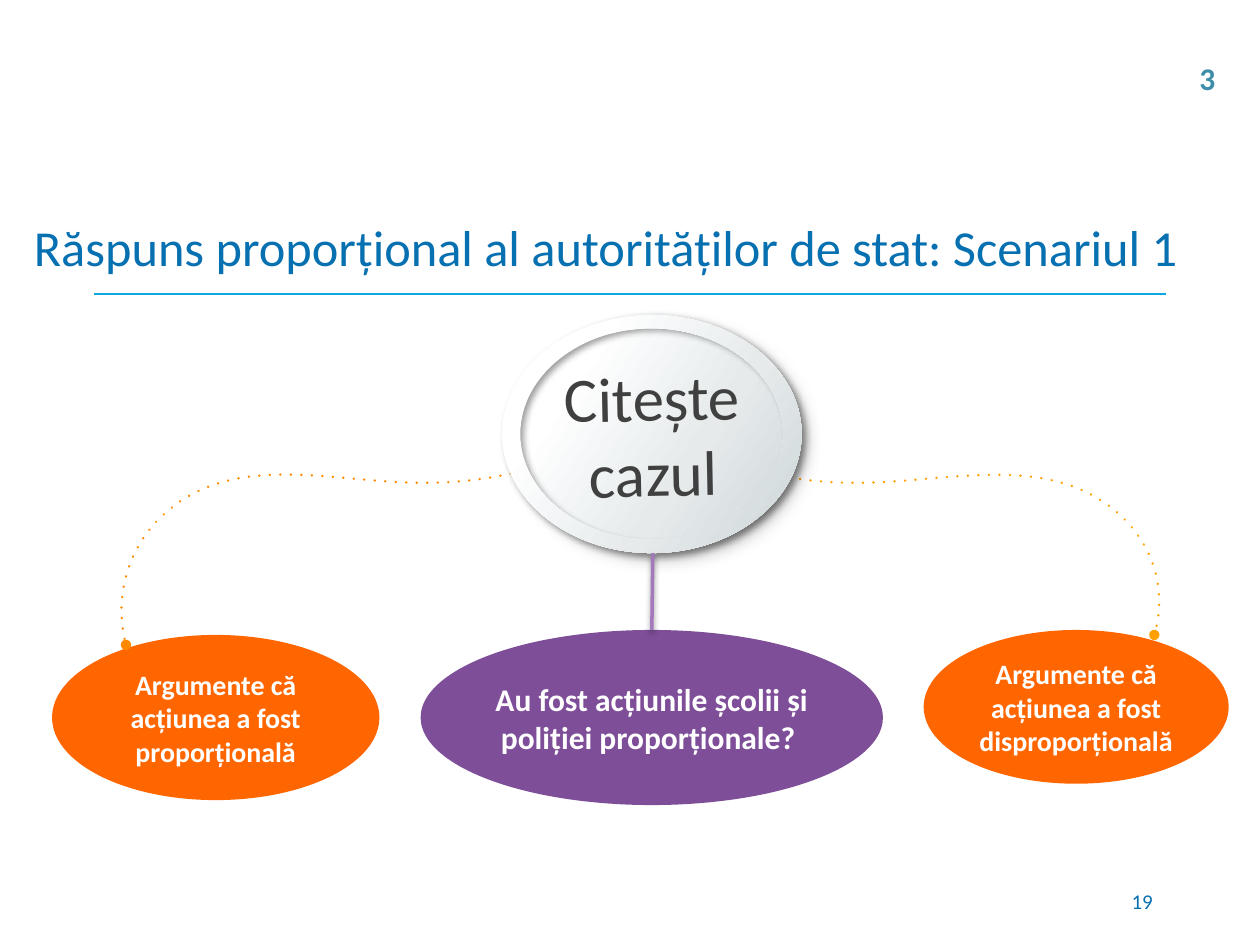
from dataclasses import dataclass

from lxml import etree
from pptx import Presentation
from pptx.dml.color import RGBColor
from pptx.enum import shapes, text
from pptx.oxml import ns
from pptx.util import Cm, Pt


@dataclass(frozen=True)
class Theme:
    font: str = "Calibri"
    blue: str = "0770B1"
    rule: str = "0BA7DF"
    orange: str = "FF6600"
    left_branch: str = "FF8A00"
    right_branch: str = "FF9F00"
    purple: str = "7E4E99"
    stem: str = "A379BB"
    badge: str = "3E8EA9"
    dark: str = "404040"
    white: str = "FFFFFF"
    metal: tuple = ((23, "FFFFFF"), (63, "E6EAEB"), (100, "CDD5D8"))
    title_size: float = 28.8
    hub_size: int = 36
    question_size: int = 18
    argument_size: int = 16
    number_size: int = 12


THEME = Theme()
CENTER, RIGHT = text.PP_ALIGN.CENTER, text.PP_ALIGN.RIGHT


def rgb(value):
    return RGBColor.from_string(value)


def child(parent, tag, **attributes):
    element = etree.SubElement(parent, ns.qn(tag))
    for key, value in attributes.items():
        element.set(key, str(value))
    return element


def place(shape, left, top, width, height):
    shape.left, shape.top = Cm(left), Cm(top)
    shape.width, shape.height = Cm(width), Cm(height)


def write(frame, words, size, color, bold=False, align=None, wrap=True,
          anchor=text.MSO_ANCHOR.MIDDLE):
    frame.word_wrap = wrap
    frame.vertical_anchor = anchor
    paragraph = frame.paragraphs[0]
    paragraph.text = words
    paragraph.alignment = align
    font = paragraph.font
    font.name, font.size, font.bold = THEME.font, Pt(size), bold
    font.color.rgb = rgb(color)


def add_label(slide, box, *args, **options):
    label = slide.shapes.add_textbox(*map(Cm, box))
    write(label.text_frame, *args, **options)


def add_effects(properties, blur=None, distance=None, angle=None):
    """Replace the theme effects by a black outer shadow, or by none."""
    effects = child(properties, "a:effectLst")
    if blur is None:
        return
    shadow = child(effects, "a:outerShdw", blurRad=Pt(blur), dist=Pt(distance),
                   dir=angle * 60000, algn="tl", rotWithShape=0)
    child(child(shadow, "a:srgbClr", val="000000"), "a:alpha", val=38000)


def fill_metal(shape):
    shape.fill.gradient()
    shape.fill.gradient_angle = 325
    stops = shape.element.spPr.find(".//" + ns.qn("a:gsLst"))
    for stop in list(stops):
        stops.remove(stop)
    for position, color in THEME.metal:
        child(child(stops, "a:gs", pos=position * 1000), "a:srgbClr", val=color)


def add_oval(parent, box, words, size, color, bold=True):
    oval = parent.shapes.add_shape(shapes.MSO_SHAPE.OVAL, *map(Cm, box))
    oval.line.fill.background()
    frame = oval.text_frame
    frame.margin_left = frame.margin_right = Cm(0.1)
    frame.margin_top = frame.margin_bottom = Cm(0.12)
    write(frame, words, size, color, bold, CENTER)
    return oval


def add_bubble(slide, box, words, size, fill):
    bubble = add_oval(slide, box, words, size, THEME.white)
    bubble.fill.solid()
    bubble.fill.fore_color.rgb = rgb(fill)
    bubble.shadow.inherit = False
    return bubble


def add_line(slide, start, end, color, width, shadow=()):
    line = slide.shapes.add_connector(shapes.MSO_CONNECTOR.STRAIGHT, *map(Cm, start + end))
    line.line.color.rgb = rgb(color)
    line.line.width = Pt(width)
    add_effects(line.element.spPr, *shadow)
    return line


def add_curve(parent, box, contours, closed):
    """Freeform in a box; each contour is a chain of cubic curves sharing their ends."""
    left, top, width, height = map(Cm, box)
    builder = parent.shapes.build_freeform(left, top)
    builder.add_line_segments([(left + width, top), (left + width, top + height)])
    curve = builder.convert_to_shape()
    outline = curve.element.spPr.find(".//" + ns.qn("a:path"))
    for step in list(outline):
        outline.remove(step)

    def add_step(tag, points):
        step = child(outline, tag)
        for x, y in points:
            child(step, "a:pt", x=Cm(x) - left, y=Cm(y) - top)

    for knots in contours:
        add_step("a:moveTo", knots[:1])
        for first in range(1, len(knots), 3):
            add_step("a:cubicBezTo", knots[first:first + 3])
        if closed:
            child(outline, "a:close")
    return curve


def add_branch(slide, box, knots, color):
    branch = add_curve(slide, box, [knots], closed=False)
    branch.fill.background()
    branch.line.color.rgb = rgb(color)
    branch.line.width = Pt(1.5)
    outline = branch.element.spPr.find(ns.qn("a:ln"))
    outline.set("cap", "rnd")
    child(outline, "a:prstDash", val="dot")
    for end in ("a:headEnd", "a:tailEnd"):
        child(outline, end, type="oval")
    branch.shadow.inherit = False


def ellipse_knots(center, radii, direction):
    k = 0.55
    quarter = [(1, 0), (1, k), (k, 1), (0, 1), (-k, 1), (-1, k), (-1, 0),
               (-1, -k), (-k, -1), (0, -1), (k, -1), (1, -k), (1, 0)]
    return [(center[0] + radii[0] * x, center[1] + direction * radii[1] * y)
            for x, y in quarter]


def add_hub(slide):
    """Metallic disc with a raised ring around it."""
    hub = slide.shapes.add_group_shape()
    disc = add_oval(hub, (10.33, 6.47, 5.66, 4.55), "Citește cazul",
                    THEME.hub_size, THEME.dark, bold=False)
    disc.rotation = 358.8
    fill_metal(disc)
    add_effects(disc.element.spPr, 12, 7.1, 39)

    center = (13.14, 8.75)
    ring = add_curve(hub, (10.12, 6.35, 6.04, 4.8),
                     [ellipse_knots(center, (3.02, 2.4), 1),
                      ellipse_knots(center, (2.65, 2.13), -1)], closed=True)
    ring.line.fill.background()
    fill_metal(ring)
    add_effects(ring.element.spPr, 4, 2.8, 39)


def main():
    deck = Presentation()
    deck.slide_width, deck.slide_height = Cm(25.4), Cm(19.05)
    slide = deck.slides.add_slide(deck.slide_layouts[5])

    title = slide.shapes.title
    place(title, 0.43, 4.01, 24.77, 1.9)
    write(title.text_frame, "Răspuns proporțional al autorităților de stat: Scenariul 1",
          THEME.title_size, THEME.blue, align=text.PP_ALIGN.LEFT)
    title.text_frame.auto_size = text.MSO_AUTO_SIZE.NONE
    add_line(slide, (1.9, 5.92), (23.5, 5.92), THEME.rule, 1)
    add_label(slide, (18.21, 17.65, 5.28, 1.02), "19", THEME.number_size, THEME.blue,
              align=RIGHT)

    add_bubble(slide, (1.05, 12.8, 6.6, 3.33), "Argumente că acțiunea a fost proporțională",
               THEME.argument_size, THEME.orange)
    add_branch(slide, (2.44, 9.47, 8.15, 3.53),
               [(10.59, 9.47), (9.83, 9.68), (9.07, 9.75), (8.28, 9.73),
                (6.5, 9.68), (4.5, 9.09), (3.15, 10.52),
                (2.54, 11.18), (2.31, 12.12), (2.54, 13)], THEME.left_branch)
    add_bubble(slide, (18.62, 12.7, 6.15, 3.1),
               "Argumente că acțiunea a fost disproporțională",
               THEME.argument_size, THEME.orange)
    add_branch(slide, (15.21, 9.47, 8.15, 3.33),
               [(15.21, 9.47), (15.98, 9.68), (16.74, 9.75), (17.53, 9.73),
                (19.3, 9.68), (21.31, 9.12), (22.66, 10.46),
                (23.27, 11.07), (23.52, 11.96), (23.27, 12.8)], THEME.right_branch)
    question = add_bubble(slide, (8.48, 12.7, 9.32, 3.53),
                          "Au fost acțiunile școlii și poliției proporționale? ",
                          THEME.question_size, THEME.purple)

    add_hub(slide)
    stem = add_line(slide, (13.16, 11.15), (13.14, 12.7), THEME.stem, 2, (3.1, 1.6, 90))
    stem.end_connect(question, 0)
    add_label(slide, (23.93, 1.07, 0.84, 1.02), "3", THEME.question_size, THEME.badge,
              bold=True, wrap=False, anchor=text.MSO_ANCHOR.TOP)

    deck.save("out.pptx")


if __name__ == "__main__":
    main()
